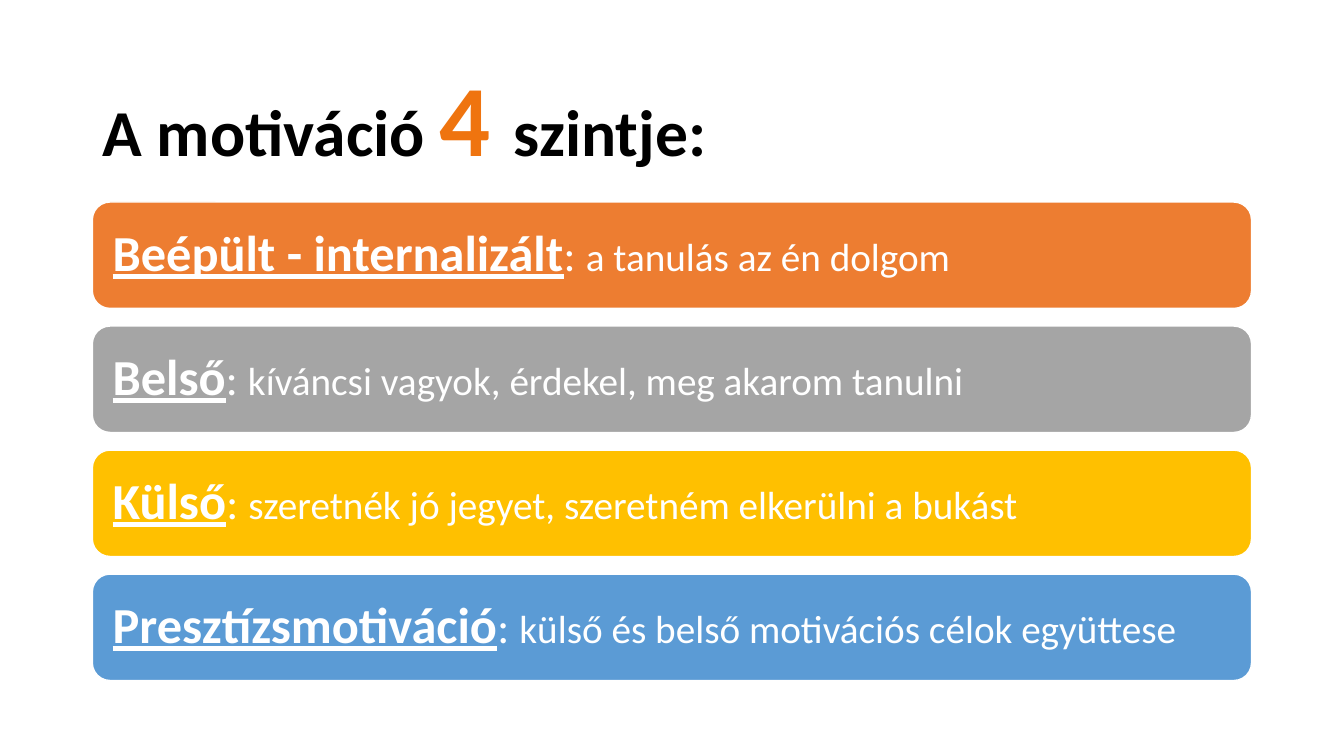
from pptx import Presentation
from pptx.dml.color import RGBColor
from pptx.enum.shapes import MSO_SHAPE
from pptx.enum.text import MSO_ANCHOR, MSO_AUTO_SIZE, PP_ALIGN
from pptx.util import Pt

# Content
TITLE = [("A motiváció ", 46.8, "black"), ("4 ", 72, "accent"), ("szintje:", 46.8, "black")]
LEVELS = [
    ("Beépült - internalizált", "a tanulás az én dolgom", "orange"),
    ("Belső", "kíváncsi vagyok, érdekel, meg akarom tanulni", "gray"),
    ("Külső", "szeretnék jó jegyet, szeretném elkerülni a bukást", "gold"),
    ("Presztízsmotiváció", "külső és belső motivációs célok együttese", "blue"),
]
COLORS = {"black": "000000", "white": "FFFFFF", "accent": "EF740F", "orange": "ED7D31",
          "gray": "A5A5A5", "gold": "FFC000", "blue": "5B9BD5"}

# Layout in points
LEFT, WIDTH = 66, 828
TITLE_TOP, TITLE_H = 43.9, 89.3
BAR_TOP, BAR_H, BAR_STEP = 144.3, 76, 88.6
INSET = 10.8


def rgb(name):
    return RGBColor.from_string(COLORS[name])


def add_run(p, text, size, color="white", bold=False, underline=False):
    r = p.add_run()
    r.text = text
    r.font.name = "Calibri"
    r.font.size = Pt(size)
    r.font.bold = bold
    r.font.underline = underline
    r.font.color.rgb = rgb(color)


def left_paragraph(tf):
    tf.word_wrap = True
    tf.auto_size = MSO_AUTO_SIZE.NONE
    tf.vertical_anchor = MSO_ANCHOR.MIDDLE
    p = tf.paragraphs[0]
    p.alignment = PP_ALIGN.LEFT
    p.line_spacing = 0.9
    p.space_before = Pt(0)
    return p


prs = Presentation()
prs.slide_width, prs.slide_height = Pt(960), Pt(540)
s = prs.slides.add_slide(prs.slide_layouts[5])

# Title
title = s.shapes.title
title.left, title.top = Pt(LEFT), Pt(TITLE_TOP)
title.width, title.height = Pt(WIDTH), Pt(TITLE_H)
p = left_paragraph(title.text_frame)
for text, size, color in TITLE:
    add_run(p, text, size, color=color, bold=True)

# Level bars
for i, (name, meaning, color) in enumerate(LEVELS):
    bar = s.shapes.add_shape(MSO_SHAPE.ROUNDED_RECTANGLE, Pt(LEFT), Pt(BAR_TOP + i * BAR_STEP),
                             Pt(WIDTH), Pt(BAR_H))
    bar.shadow.inherit = False
    bar.fill.solid()
    bar.fill.fore_color.rgb = rgb(color)
    bar.line.color.rgb = rgb("white")
    bar.line.width = Pt(1)
    tf = bar.text_frame
    tf.margin_left = tf.margin_right = tf.margin_top = tf.margin_bottom = Pt(INSET)
    p = left_paragraph(tf)
    add_run(p, name, 36, bold=True, underline=True)
    add_run(p, ": ", 32)
    add_run(p, meaning, 28)

prs.save("out.pptx")
